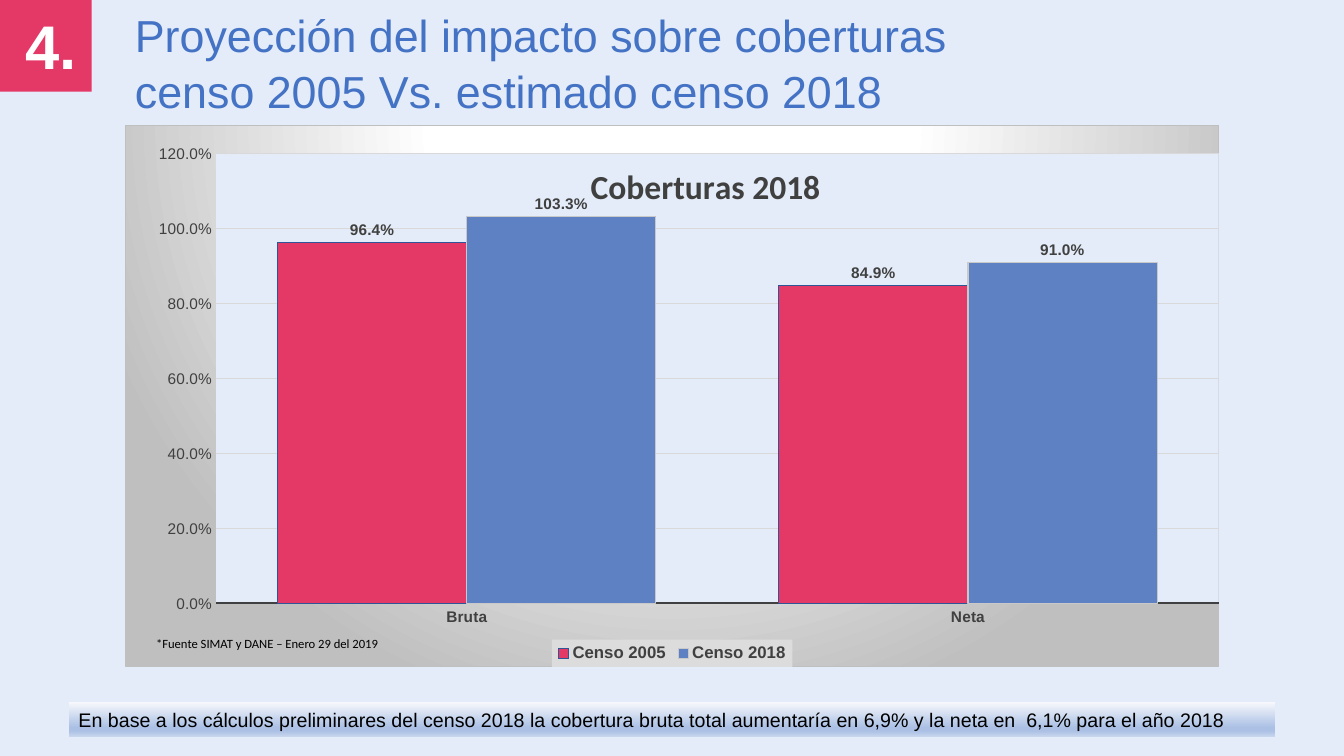
import pptx
import pptx.chart.data
import pptx.dml.color
import pptx.enum.chart
import pptx.enum.shapes
import pptx.enum.text
import pptx.oxml
import pptx.util
from lxml import etree

Pt = pptx.util.Pt

# Content
NUMBER = ["4."]
HEADING = ["Proyección del impacto sobre coberturas", "censo 2005 Vs. estimado censo 2018"]
SOURCE = ["*Fuente SIMAT y DANE – Enero 29 del 2019"]
CONCLUSION = ["En base a los cálculos preliminares del censo 2018 la cobertura bruta total "
              "aumentaría en 6,9% y la neta en  6,1% para el año 2018"]
CHART_TITLE = "Coberturas 2018"
CATEGORIES = ["Bruta", "Neta"]
SERIES = [  # name, values, fill, outline
    ("Censo 2005", (0.964, 0.849), "pink", "navy"),
    ("Censo 2018", (1.033, 0.91), "steel", "silver"),
]

THEME = {
    "colors": {"back": "E3ECF8", "pink": "E43866", "steel": "5D81C3", "navy": "2F5597",
               "silver": "C9C9C9", "heading": "4472C4", "ink": "404040", "black": "000000",
               "white": "FFFFFF", "grid": "D9D9D9", "border": "BFBFBF", "legend": "DCDCDC"},
    "sizes": {"number": 44, "heading": 32, "chart_title": 24, "body": 14,
              "legend": 12, "axis": 11, "source": 9},
    "panel_gradient": [(0, "FFFFFF"), (39, "FFFFFF"), (100, "BFBFBF")],
    "band_gradient": [(0, "F6F8FC"), (74, "ABC0E4"), (83, "ABC0E4"), (100, "C7D5ED")],
}
RADIAL = ('<a:path path="circle"><a:fillToRect l="50000" t="-80000" r="50000" b="180000"/>'
          '</a:path>')
DOWNWARD = '<a:lin ang="5400000" scaled="0"/>'
NAMESPACE = 'xmlns:a="http://schemas.openxmlformats.org/drawingml/2006/main"'


def color(name):
    return pptx.dml.color.RGBColor.from_string(THEME["colors"][name])


def style_font(font, size, tint="ink", bold=False, face="Arial"):
    font.name, font.size, font.bold = face, Pt(THEME["sizes"][size]), bold
    font.color.rgb = color(tint)


def paint(fill, tint):
    fill.solid()
    fill.fore_color.rgb = color(tint)


def draw_line(line, tint, width=0.75):
    line.color.rgb, line.width = color(tint), Pt(width)


def gradient(stops, direction):
    marks = "".join(f'<a:gs pos="{at * 1000}"><a:srgbClr val="{tint}"/></a:gs>'
                    for at, tint in stops)
    return pptx.oxml.parse_xml(f'<a:gradFill {NAMESPACE} rotWithShape="1">'
                               f'<a:gsLst>{marks}</a:gsLst>{direction}</a:gradFill>')


def write(shape, lines, size, tint, bold=False, face="Arial", spacing=None):
    frame = shape.text_frame
    frame.word_wrap = True
    frame.text = "\n".join(lines)
    for para in frame.paragraphs:
        para.alignment = pptx.enum.text.PP_ALIGN.LEFT
        para.line_spacing = spacing
        for span in para.runs:
            style_font(span.font, size, tint, bold, face)


def add_box(page, place, *text, **options):
    box = page.shapes.add_textbox(*map(Pt, place))
    write(box, *text, **options)


def add_block(page, place):
    block = page.shapes.add_shape(pptx.enum.shapes.MSO_SHAPE.RECTANGLE, *map(Pt, place))
    block.shadow.inherit = False
    block.line.fill.background()
    return block


def set_layout(parent, before, **edges):
    """Place a chart part by fractions of the chart area."""
    tag = "{http://schemas.openxmlformats.org/drawingml/2006/chart}"
    for old in parent.findall(tag + "layout"):
        parent.remove(old)
    layout = etree.Element(tag + "layout")
    manual = etree.SubElement(layout, tag + "manualLayout")
    if before == "barChart":
        etree.SubElement(manual, tag + "layoutTarget").set("val", "inner")
    for mode in ("xMode", "yMode"):
        etree.SubElement(manual, tag + mode).set("val", "edge")
    for edge, value in edges.items():
        etree.SubElement(manual, tag + edge).set("val", str(value))
    parent.find(tag + before).addprevious(layout)


def add_coverage_chart(page, place):
    kinds = pptx.enum.chart
    data = pptx.chart.data.CategoryChartData(number_format="0.0%")
    data.categories = CATEGORIES
    for name, values, _, _ in SERIES:
        data.add_series(name, values)
    chart = page.shapes.add_chart(kinds.XL_CHART_TYPE.COLUMN_CLUSTERED,
                                  *map(Pt, place), data).chart
    style_font(chart.font, "axis")

    # Title over the plot
    title = chart.chart_title
    title.text_frame.text = CHART_TITLE
    style_font(title.text_frame.paragraphs[0].runs[0].font, "chart_title", bold=True,
               face="Calibri")
    title.include_in_layout = False
    set_layout(title._element, "overlay", x=0.42, y=0.06)

    # Columns and labels
    plot = chart.plots[0]
    plot.gap_width, plot.overlap, plot.vary_by_categories = 65, 0, False
    for series, (_, _, fill, outline) in zip(plot.series, SERIES):
        paint(series.format.fill, fill)
        draw_line(series.format.line, outline)
        labels = series.data_labels
        labels.show_value = True
        labels.number_format, labels.number_format_is_linked = "0.0%", False
        labels.position = kinds.XL_LABEL_POSITION.OUTSIDE_END
        style_font(labels.font, "axis", bold=True)

    # Axes
    for axis, bold in ((chart.category_axis, True), (chart.value_axis, False)):
        axis.major_tick_mark = axis.minor_tick_mark = kinds.XL_TICK_MARK.NONE
        style_font(axis.tick_labels.font, "axis", bold=bold)
    draw_line(chart.category_axis.format.line, "ink", 1.5)
    scale = chart.value_axis
    scale.minimum_scale, scale.maximum_scale, scale.major_unit = 0, 1.2, 0.2
    scale.tick_labels.number_format, scale.tick_labels.number_format_is_linked = "0.0%", False
    scale.format.line.fill.background()
    draw_line(scale.major_gridlines.format.line, "grid")

    # Legend
    chart.has_legend = True
    legend = chart.legend
    legend.position, legend.include_in_layout = kinds.XL_LEGEND_POSITION.BOTTOM, False
    style_font(legend.font, "legend", bold=True)
    set_layout(legend._element, "overlay", x=0.39, y=0.95, w=0.22, h=0.05)
    panel = pptx.oxml.parse_xml(
        '<c:spPr xmlns:c="http://schemas.openxmlformats.org/drawingml/2006/chart" '
        f'{NAMESPACE}><a:solidFill><a:srgbClr val="{THEME["colors"]["legend"]}"/>'
        '</a:solidFill></c:spPr>')
    legend._element.txPr.addprevious(panel)

    # Plot and chart backgrounds
    area = chart._chartSpace.chart.plotArea
    set_layout(area, "barChart", x=0.083, y=0.052, w=0.917, h=0.831)
    plot_back = pptx.oxml.parse_xml(etree.tostring(panel))
    plot_back[0][0].set("val", THEME["colors"]["back"])
    area.append(plot_back)
    chart_back = pptx.oxml.parse_xml(etree.tostring(panel))
    chart_back.replace(chart_back[0], gradient(THEME["panel_gradient"], RADIAL))
    chart_back.append(pptx.oxml.parse_xml(
        f'<a:ln {NAMESPACE} w="9525"><a:solidFill>'
        f'<a:srgbClr val="{THEME["colors"]["border"]}"/></a:solidFill></a:ln>'))
    chart._chartSpace.chart.addnext(chart_back)


def main():
    deck = pptx.Presentation()
    deck.slide_width, deck.slide_height = Pt(960), Pt(540)
    page = deck.slides.add_slide(deck.slide_layouts[6])
    paint(page.background.fill, "back")

    # Numbered corner
    paint(add_block(page, (0, 0, 65.5, 65.5)).fill, "pink")
    add_box(page, (10.8, 2.2, 54.7, 60.5), NUMBER, "number", "white", bold=True)

    # Chart and heading
    add_coverage_chart(page, (89.3, 89.3, 781.9, 387.4))
    add_box(page, (89.3, 0, 870, 85), HEADING, "heading", "heading", spacing=1.05)

    # Conclusion band
    band = add_block(page, (49, 501.8, 861.8, 24.5))
    band.fill.background()
    properties = band._element.spPr
    properties.replace(properties.find(".//{*}noFill"),
                       gradient(THEME["band_gradient"], DOWNWARD))
    write(band, CONCLUSION, "body", "black")
    band.text_frame.paragraphs[0].alignment = pptx.enum.text.PP_ALIGN.JUSTIFY

    # Source note
    add_box(page, (104.4, 450.7, 321.8, 18), SOURCE, "source", "black", face="Calibri")
    deck.save("out.pptx")


if __name__ == "__main__":
    main()
